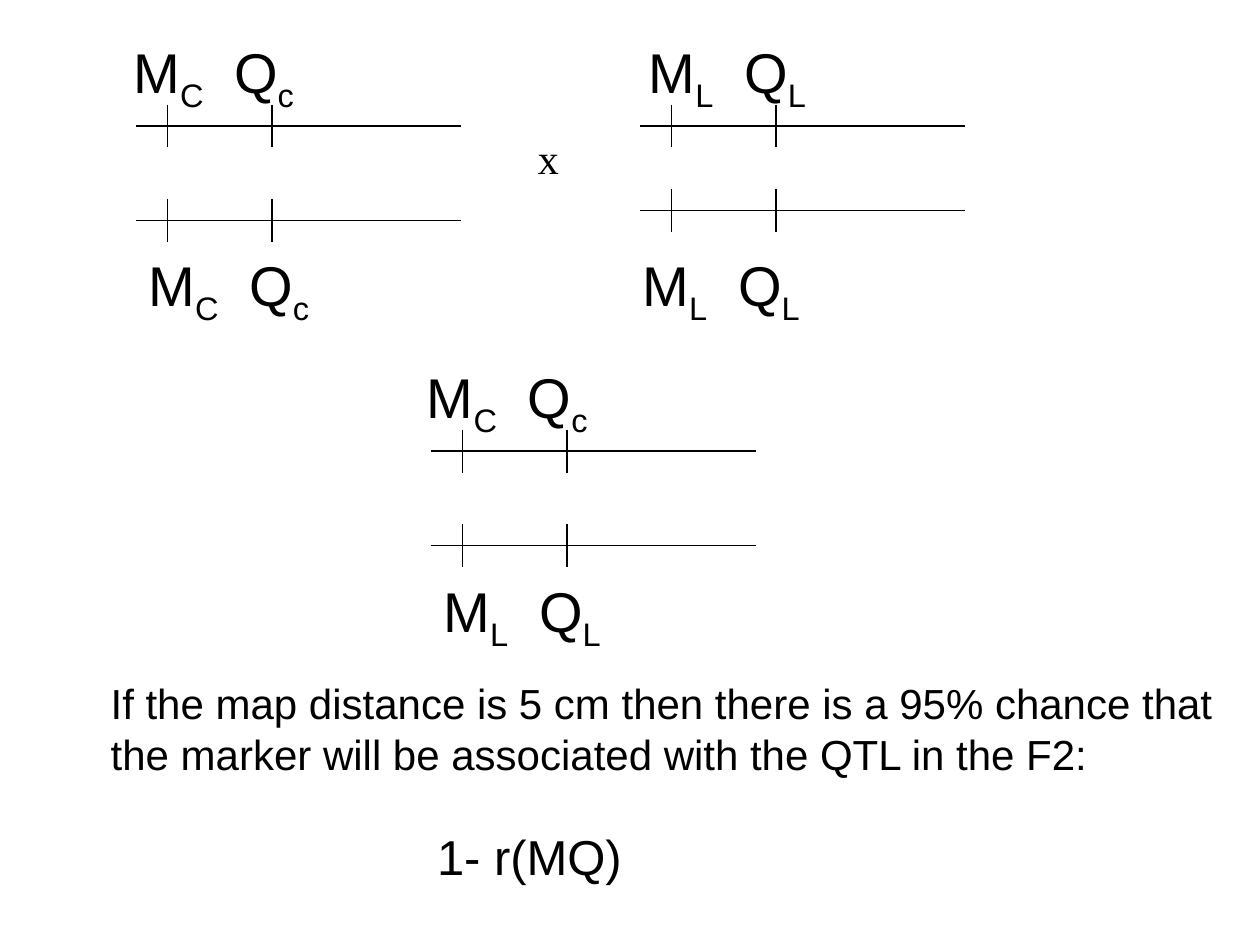
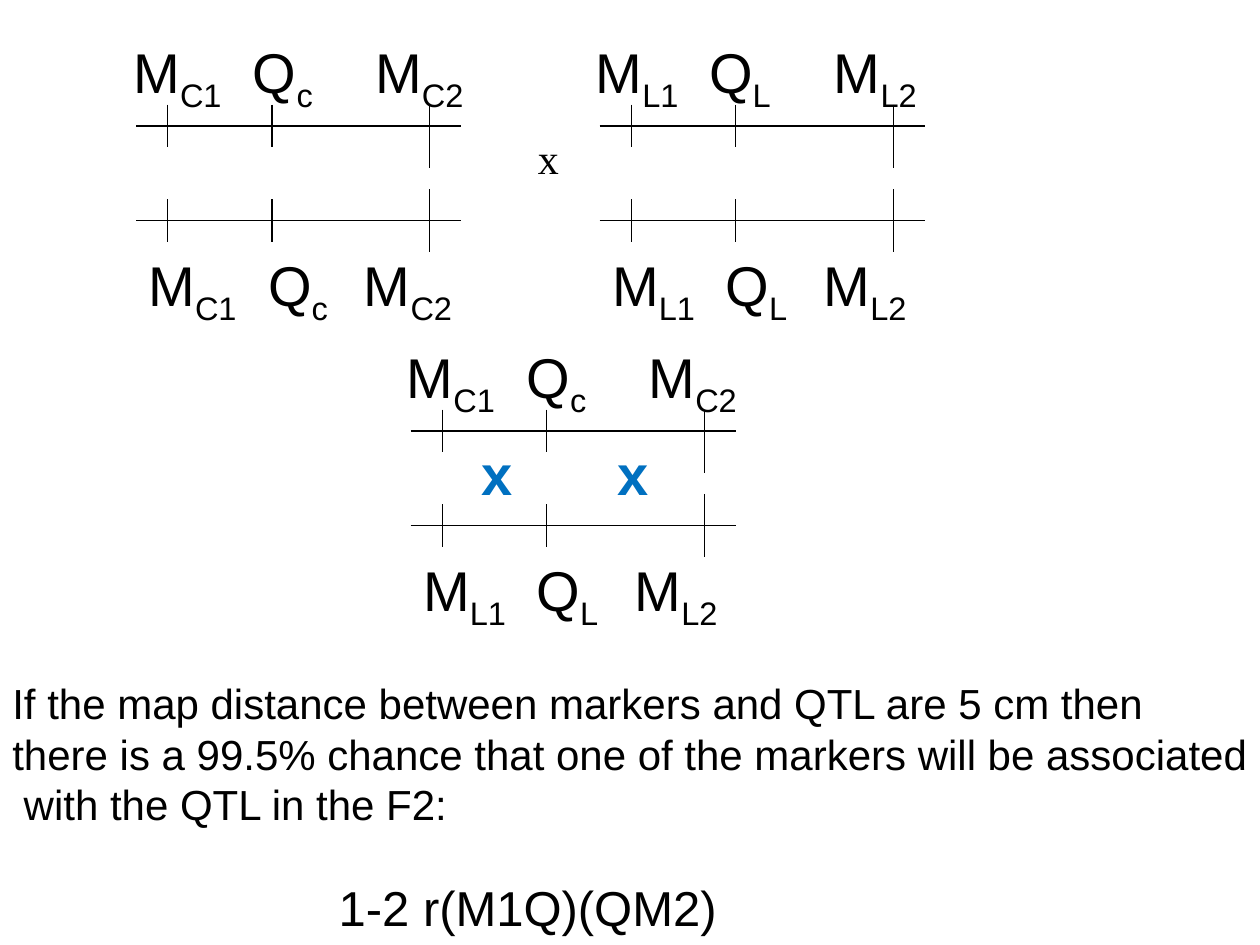
from lxml.etree import SubElement
from pptx import Presentation
from pptx.dml.color import RGBColor
from pptx.enum.shapes import MSO_CONNECTOR
from pptx.oxml.ns import qn
from pptx.util import Inches, Pt

BLACK, BLUE = "000000", "0070C0"
SANS, SERIF = "Arial", "Times New Roman"

# Chromosome geometry, measured from the left end and the height of its line
LENGTH = 2.58
TICKS = [(0.25, 0.17), (1.08, 0.17)]
SECOND_MARKER = 2.33

# Locus names of each allele, with tab stops above and below a chromosome pair
ONE_MARKER = {
    "C": ([("M", "C"), ("Q", "c")], [0.8], [0.8]),
    "L": ([("M", "L"), ("Q", "L")], [0.76], [0.76]),
}
TWO_MARKERS = {
    "C": ([("M", "C1"), ("Q", "c"), ("M", "C2")], [0.95, 1.92], [0.95, 1.71]),
    "L": ([("M", "L1"), ("Q", "L"), ("M", "L2")], [0.9, 1.89], [0.9, 1.68]),
}

# Pairs: left, upper line, lower line, alleles, upper label, lower label
SLIDES = [
    {
        "alleles": ONE_MARKER,
        "pairs": [
            (1.08, 1, 1.75, "CC", (0.96, 0.25), (1.08, 1.94)),
            (5.08, 1, 1.67, "LL", (5.05, 0.25), (5, 1.94)),
            (3.42, 3.58, 4.33, "CL", (3.29, 2.83), (3.42, 4.53)),
        ],
        "crossovers": [],
        "text_left": 0.78,
        "lines": ["If the map distance is 5 cm then there is a 95% chance that",
                  "the marker will be associated with the QTL in the F2:"],
        "formula": "1- r(MQ)",
    },
    {
        "alleles": TWO_MARKERS,
        "pairs": [
            (1.08, 1, 1.75, "CC", (0.96, 0.25), (1.08, 1.94)),
            (4.76, 1, 1.75, "LL", (4.63, 0.25), (4.76, 1.94)),
            (3.26, 3.42, 4.17, "CL", (3.13, 2.67), (3.26, 4.36)),
        ],
        "crossovers": [3.72, 4.8],
        "text_left": 0,
        "lines": ["If the map distance between markers and QTL are 5 cm then",
                  "there is a 99.5% chance that one of the markers will be associated",
                  "with the QTL in the F2:"],
        "formula": "1-2 r(M1Q)(QM2)",
    },
]


def add_line(page, x1, y1, x2, y2):
    line = page.shapes.add_connector(
        MSO_CONNECTOR.STRAIGHT, Inches(x1), Inches(y1), Inches(x2), Inches(y2))
    line.line.color.rgb = RGBColor.from_string(BLACK)
    line.line.width = Pt(0.75)
    SubElement(line._element.spPr, qn("a:effectLst"))


def add_text(page, left, top, width, height, text="", size=32, font=SANS, color=BLACK, bold=False):
    box = page.shapes.add_textbox(Inches(left), Inches(top), Inches(width), Inches(height))
    frame = box.text_frame
    frame.word_wrap = True
    frame.margin_right = 0
    frame.text = text
    for para in frame.paragraphs:
        para.font.size = Pt(size)
        para.font.name = font
        para.font.bold = bold
        para.font.color.rgb = RGBColor.from_string(color)
    return frame.paragraphs


deck = Presentation()
deck.slide_width, deck.slide_height = Inches(10), Inches(7.5)

for content in SLIDES:
    page = deck.slides.add_slide(deck.slide_layouts[6])
    has_second_marker = content["alleles"] is TWO_MARKERS

    for left, upper, lower, genotype, *label_places in content["pairs"]:
        # Chromosomes with their locus ticks
        for y, below in ((upper, 0.33), (lower, 0.25)):
            add_line(page, left, y, left + LENGTH, y)
            for offset, half in TICKS:
                add_line(page, left + offset, y - half, left + offset, y + half)
            if has_second_marker:
                x = left + SECOND_MARKER
                add_line(page, x, y + below - 0.5, x, y + below)

        # Locus labels, spaced by tab stops
        for row, (allele, (x, y)) in enumerate(zip(genotype, label_places)):
            loci, *stops = content["alleles"][allele]
            para = add_text(page, x, y, 3 if has_second_marker else 1.54, 0.64)[0]
            properties = para._p.get_or_add_pPr()
            tabs = properties.makeelement(qn("a:tabLst"), {})
            properties.insert(0, tabs)
            for stop in stops[row]:
                SubElement(tabs, qn("a:tab"), pos=str(Inches(stop)), algn="l")
            for index, (locus, subscript) in enumerate(loci):
                para.add_run().text = "\t" + locus if index else locus
                span = para.add_run()
                span.text = subscript
                span._r.get_or_add_rPr().set("baseline", "-25000")
            for span in para.runs:
                span.font.size = Pt(32)
                span.font.name = SANS
                span.font.color.rgb = RGBColor.from_string(BLACK)

    # Cross between the parents and crossovers in the F1
    add_text(page, 4.17, 1, 0.37, 0.51, "x", 24, SERIF)
    for x in content["crossovers"]:
        add_text(page, x, 3.44, 0.45, 0.64, "x", color=BLUE, bold=True)

    # Explanation and formula
    lines = content["lines"] + [content["formula"]]
    left = content["text_left"]
    paras = add_text(page, left, 5.33, 10 - left, 0.6 + 0.4 * len(lines), "\n".join(lines), 24)
    if has_second_marker:
        paras[2]._p.get_or_add_pPr().set("marL", str(Inches(0.09)))
    formula = paras[-1]
    formula.font.size = Pt(28)
    formula.space_before = Pt(27.6)
    formula._p.get_or_add_pPr().set("marL", str(Inches(2.59)))

deck.save("out.pptx")
